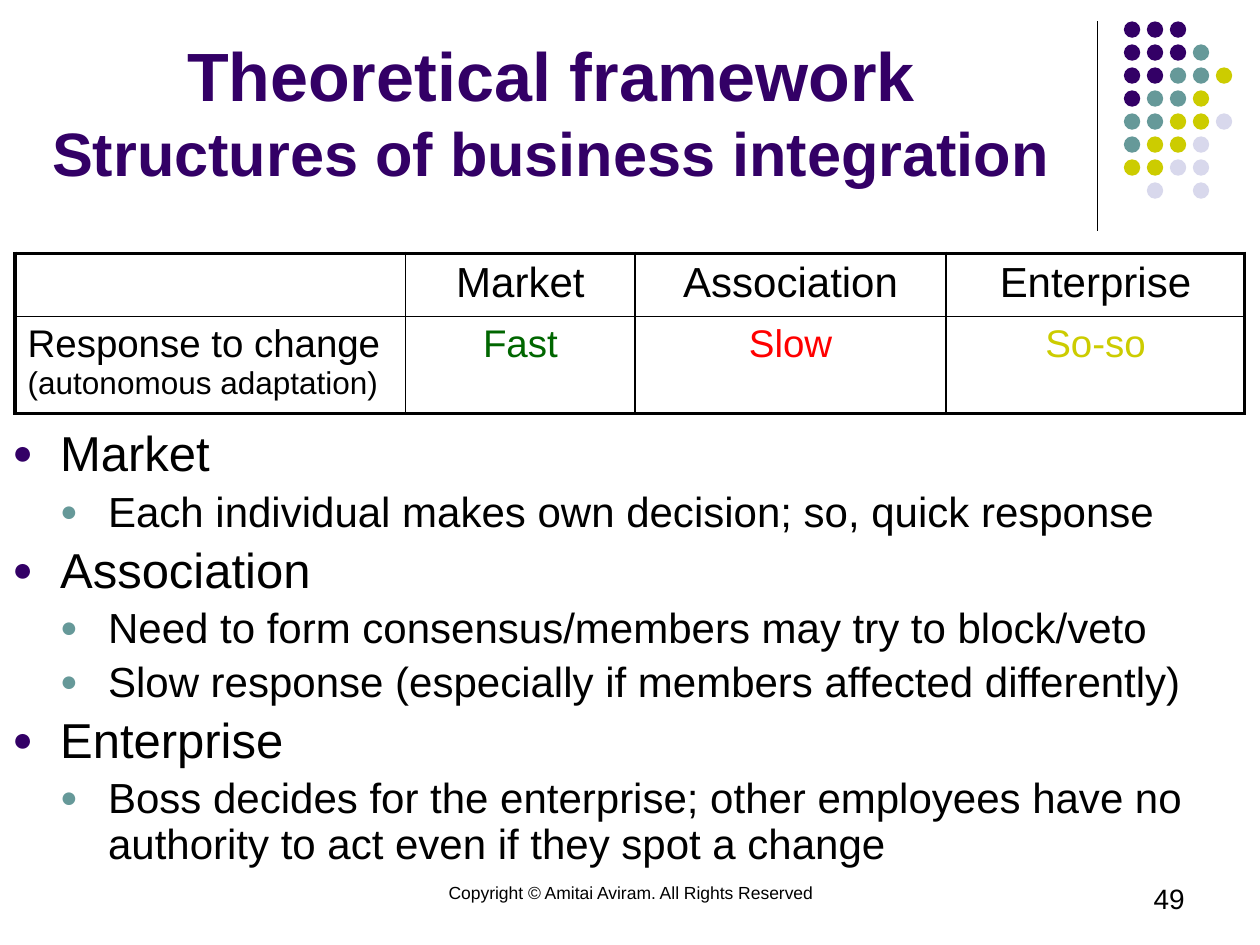
from lxml.etree import SubElement
from pptx import Presentation
from pptx.dml.color import RGBColor
from pptx.enum.shapes import MSO_CONNECTOR as Connector, MSO_SHAPE as Shape
from pptx.enum.text import MSO_ANCHOR as Anchor, PP_ALIGN as Align
from pptx.oxml.ns import qn
from pptx.util import Inches, Pt

BLACK, PURPLE, TEAL, OLIVE, LILAC = "000000", "330066", "669999", "CCCC00", "D8D8EC"
GREEN, RED = "006600", "FF0000"

DOT_COLORS = {"P": PURPLE, "T": TEAL, "O": OLIVE, "L": LILAC}
DOT_ROWS = ["PPP", "PPPT", "PPTTO", "PTTO", "TTOOL", "TOOL", "OOLL", " L L"]

COLUMNS = [3.1, 1.82, 2.47, 2.37]
ROWS = [0.5, 0.77]
# Each cell is a list of lines: (text, size, color)
CELLS = [
    [[], [("Market", 24, BLACK)], [("Association", 24, BLACK)], [("Enterprise", 24, BLACK)]],
    [[("Response to change", 22, BLACK), ("(autonomous adaptation)", 18, BLACK)],
     [("Fast", 22, GREEN)], [("Slow", 22, RED)], [("So-so", 22, OLIVE)]],
]

POINTS = [
    (0, "Market"),
    (1, "Each individual makes own decision; so, quick response"),
    (0, "Association"),
    (1, "Need to form consensus/members may try to block/veto"),
    (1, "Slow response (especially if members affected differently)"),
    (0, "Enterprise"),
    (1, "Boss decides for the enterprise; other employees have no authority "
        "to act even if they spot a change"),
]
LEVELS = [{"size": 28, "bullet": PURPLE}, {"size": 24, "bullet": TEAL}]


def rgb(value):
    return RGBColor.from_string(value)


def set_values(target, values):
    for name, value in values.items():
        setattr(target, name, value)


def add_span(para, text, size, color=BLACK, bold=False):
    span = para.add_run()
    span.text = text
    set_values(span.font, {"name": "Arial", "size": Pt(size), "bold": bold})
    span.font.color.rgb = rgb(color)


def add_frame(page, box, anchor=Anchor.TOP):
    frame = page.shapes.add_textbox(*map(Inches, box)).text_frame
    set_values(frame, {"word_wrap": True, "vertical_anchor": anchor})
    return frame


def add_lines(para, lines, align, bold=False):
    para.alignment = align
    for index, (text, size, color) in enumerate(lines):
        if index:
            para.add_line_break()
        add_span(para, text, size, color, bold)


def add_bullet(para, color, indent):
    props = para._p.get_or_add_pPr()
    props.set("marL", str(Inches(indent)))
    props.set("indent", str(-Inches(0.38)))
    SubElement(SubElement(props, qn("a:buClr")), qn("a:srgbClr"), val=color)
    SubElement(props, qn("a:buSzPct"), val="70000")
    SubElement(props, qn("a:buFont"), typeface="Arial")
    SubElement(props, qn("a:buChar"), char="●")


def add_border(cell, side, width):
    line = SubElement(cell._tc.get_or_add_tcPr(), qn("a:ln" + side), w=str(Pt(width)))
    SubElement(SubElement(line, qn("a:solidFill")), qn("a:srgbClr"), val=BLACK)


def draw_ornament(page, box):
    left, top, width, height = box
    # Vertical rule
    rule = page.shapes.add_connector(
        Connector.STRAIGHT, *map(Inches, (left, top, left, top + height)))
    rule.line.color.rgb = rgb(BLACK)
    rule.line.width = Pt(0.75)
    SubElement(rule._element.spPr, qn("a:effectLst"))

    # Dot grid
    dot_size, gap = 0.13, 0.21
    pitch = (width - gap - dot_size) / 4
    dots = page.shapes.add_group_shape()
    for row, pattern in enumerate(DOT_ROWS):
        for column, key in enumerate(pattern):
            if key == " ":
                continue
            dot = dots.shapes.add_shape(
                Shape.OVAL, Inches(left + gap + column * pitch),
                Inches(top + row * pitch), Inches(dot_size), Inches(dot_size))
            dot.shadow.inherit = False
            dot.fill.solid()
            dot.fill.fore_color.rgb = rgb(DOT_COLORS[key])
            dot.line.fill.background()


def draw_title(page, box):
    frame = add_frame(page, box, Anchor.BOTTOM)
    lines = [("Theoretical framework", 39, PURPLE),
             ("Structures of business integration", 35, PURPLE)]
    add_lines(frame.paragraphs[0], lines, Align.CENTER, bold=True)


def draw_table(page, box):
    table = page.shapes.add_table(len(ROWS), len(COLUMNS), *map(Inches, box)).table
    set_values(table, {"first_row": False, "horz_banding": False})
    for column, width in zip(table.columns, COLUMNS):
        column.width = Inches(width)
    for row, height in zip(table.rows, ROWS):
        row.height = Inches(height)

    last_row, last_column = len(ROWS) - 1, len(COLUMNS) - 1
    for row, row_cells in enumerate(CELLS):
        for column, lines in enumerate(row_cells):
            cell = table.cell(row, column)
            # Thick outer frame, thin inner lines
            outer = {"L": column == 0, "R": column == last_column,
                     "T": row == 0, "B": row == last_row}
            for side, is_outer in outer.items():
                add_border(cell, side, 2.25 if is_outer else 1)
            cell.fill.background()
            para = cell.text_frame.paragraphs[0]
            add_lines(para, lines, Align.CENTER if column else Align.LEFT)
            if lines:
                para.space_before = Pt(lines[0][1] * 0.2)


def draw_points(page, box):
    frame = add_frame(page, box)
    for index, (level, text) in enumerate(POINTS):
        para = frame.add_paragraph() if index else frame.paragraphs[0]
        size = LEVELS[level]["size"]
        set_values(para, {"level": level, "line_spacing": 0.9,
                          "space_before": Pt(size * 0.2)})
        add_bullet(para, LEVELS[level]["bullet"], 0.38 * (level + 1))
        add_span(para, text, size)


def draw_footer(page, box):
    left, top, width, height = box
    # Copyright line in the middle, page number on the right
    copyright_frame = add_frame(page, (left, top, 3.17, height))
    add_lines(copyright_frame.paragraphs[0],
              [("Copyright © Amitai Aviram. All Rights Reserved", 10, BLACK)], Align.CENTER)
    number_frame = add_frame(page, (left + width - 2.33, top, 2.33, height))
    add_lines(number_frame.paragraphs[0], [("49", 16, BLACK)], Align.RIGHT)


def main():
    deck = Presentation()
    set_values(deck, {"slide_width": Inches(10), "slide_height": Inches(7.5)})
    page = deck.slides.add_slide(deck.slide_layouts[6])
    draw_ornament(page, (8.71, 0.17, 1.07, 1.66))
    draw_footer(page, (3.42, 6.95, 6.08, 0.5))
    draw_title(page, (0, 0.13, 8.75, 1.42))
    draw_points(page, (0, 3.36, 10, 3.7))
    draw_table(page, (0.12, 2.01, 9.76, 1.27))
    deck.save("out.pptx")


if __name__ == "__main__":
    main()
